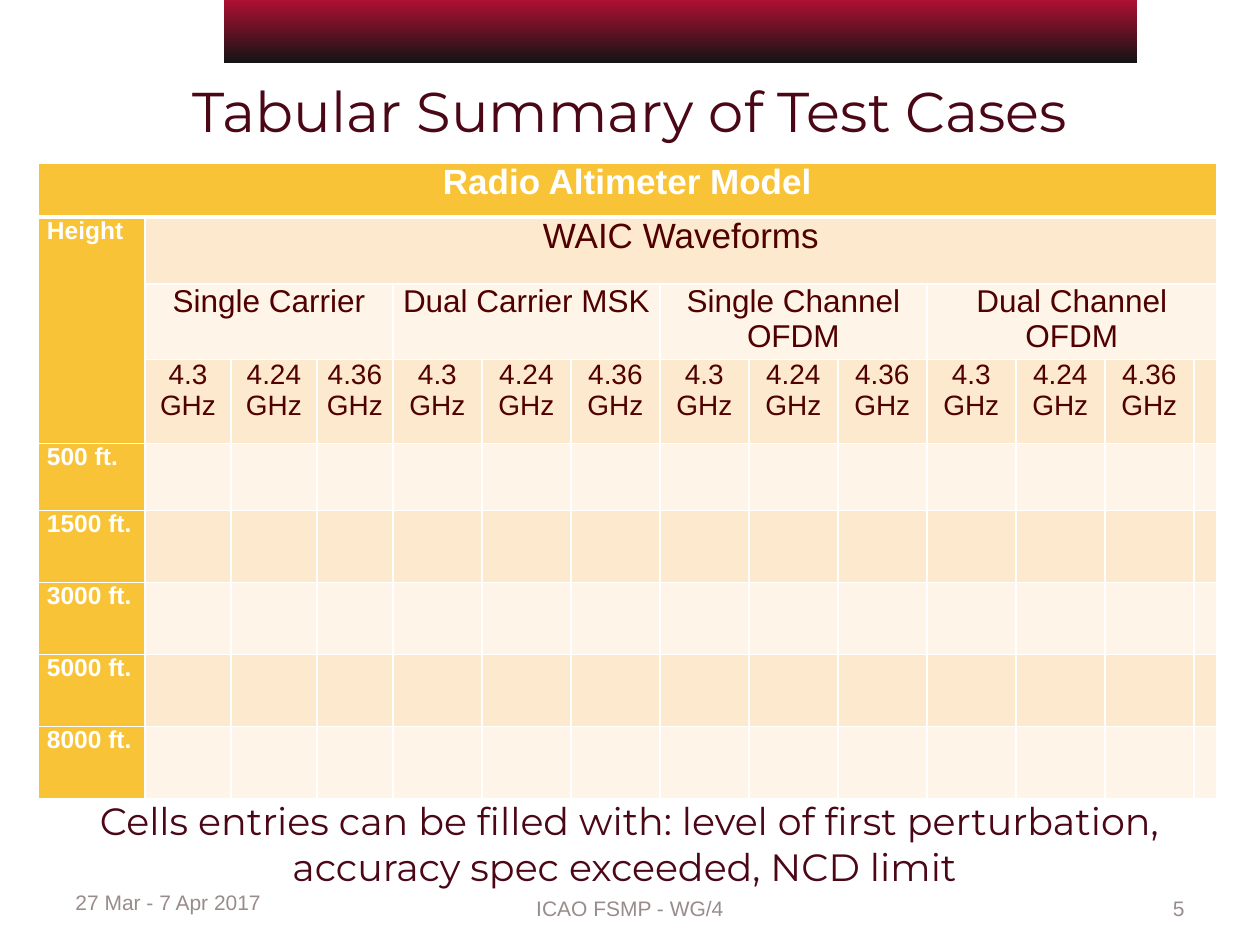
from lxml.etree import SubElement
from pptx import Presentation
from pptx.dml.color import RGBColor
from pptx.enum.shapes import MSO_SHAPE
from pptx.enum.text import MSO_ANCHOR as ANC, PP_ALIGN as AL
from pptx.oxml.ns import qn
from pptx.util import Emu, Pt

COLORS = {
    "black": "141414", "crimson": "AD1033", "title": "4B0716",
    "gold": "F8C336", "band": "FCE9CE", "pale": "FEF5E8",
    "ink": "500000", "white": "FFFFFF", "grey": "988C8C",
}
GROUPS = ["Single Carrier", "Dual Carrier MSK", "Single Channel OFDM", "Dual Channel OFDM"]
FREQUENCIES = ["4.3 GHz", "4.24 GHz", "4.36 GHz"]
HEIGHTS = ["500 ft.", "1500 ft.", "3000 ft.", "5000 ft.", "8000 ft."]
COLS = [107, 86, 86, 76] + [89] * 9 + [19]
ROWS = [54, 67, 67, 84, 67] + [72] * 4
FIRST_HEIGHT_ROW = 4


def px(n):
    """Turn pixels, 126 to the inch, into EMU."""
    return Emu(round(n * 914400 / 126))


def rgb(name):
    """Look up a named colour."""
    return RGBColor.from_string(COLORS[name])


def write(tf, text, size=12, color="grey", font="Arial", bold=False, align=AL.LEFT):
    """Put one formatted paragraph into a text frame."""
    p = tf.paragraphs[0]
    p.alignment = align
    r = p.add_run()
    r.text = text
    r.font.size, r.font.name, r.font.bold = Pt(size), font, bold
    r.font.color.rgb = rgb(color)


def place(s, x, y, w, h):
    """Set the position and size of a shape."""
    s.left, s.top, s.width, s.height = map(px, (x, y, w, h))


def add_text(slide, box, text, anchor=ANC.MIDDLE, **fmt):
    """Add a wrapped text box."""
    tf = slide.shapes.add_textbox(*map(px, box)).text_frame
    tf.word_wrap = True
    tf.vertical_anchor = anchor
    write(tf, text, **fmt)


def add_title(slide, text):
    """Move and fill the title placeholder."""
    s = slide.shapes.title
    place(s, 63, 63, 1134, 95)
    s.text_frame.vertical_anchor = ANC.MIDDLE
    write(s.text_frame, text, size=32, color="title", font="Montserrat", align=AL.CENTER)


def add_banner(slide):
    """Add the gradient bar at the top edge."""
    s = slide.shapes.add_shape(MSO_SHAPE.RECTANGLE, *map(px, (224, 0, 913, 63)))
    s.shadow.inherit = False
    s.line.fill.background()
    s.fill.gradient()
    s.fill.gradient_angle = 90
    for stop, name in zip(s.fill.gradient_stops, ("black", "crimson")):
        stop.color.rgb = rgb(name)


def add_borders(cell, **widths):
    """Draw white cell borders, one point wide unless a side is given."""
    tc_pr = cell._tc.get_or_add_tcPr()
    for side in "LRTB":
        ln = SubElement(tc_pr, qn(f"a:ln{side}"), w=str(Pt(widths.get(side, 1))))
        fill = SubElement(ln, qn("a:solidFill"))
        SubElement(fill, qn("a:srgbClr"), val=COLORS["white"])


def style_cell(cell, row, col):
    """Set the margins, borders and fill that belong to a grid position."""
    cell.margin_left = cell.margin_right = px(9)
    cell.margin_top = cell.margin_bottom = 0
    add_borders(cell, **{0: {"B": 3}, 1: {"T": 3}}.get(row, {}))
    cell.fill.solid()
    head = row == 0 or col == 0
    cell.fill.fore_color.rgb = rgb("gold" if head else "band" if row % 2 else "pale")


def add_table(slide):
    """Add the grid of test cases by height, waveform and frequency."""
    box = map(px, (38, 163, sum(COLS), sum(ROWS)))
    table = slide.shapes.add_table(len(ROWS), len(COLS), *box).table
    table.first_row = table.horz_banding = False
    for column, w in zip(table.columns, COLS):
        column.width = px(w)
    for i, (row, h) in enumerate(zip(table.rows, ROWS)):
        row.height = px(h)
        for j, cell in enumerate(row.cells):
            style_cell(cell, i, j)

    def put(row, col, text, end=None, **fmt):
        """Write a cell, merged down or across to its end cell."""
        cell = table.cell(row, col)
        if end:
            cell.merge(table.cell(*end))
        write(cell.text_frame, text, **fmt)

    center = {"color": "ink", "align": AL.CENTER}
    label = {"size": 14, "color": "white", "bold": True, "align": AL.JUSTIFY}
    last = len(COLS) - 1
    put(0, 0, "Radio Altimeter Model", (0, last), size=20, color="white", bold=True, align=AL.CENTER)
    put(1, 0, "Height", (3, 0), **label)
    put(1, 1, "WAIC Waveforms", (1, last), size=20, **center)
    for g, group in enumerate(GROUPS):
        col = 1 + g * len(FREQUENCIES)
        end = last if group == GROUPS[-1] else col + 2
        put(2, col, group, (2, end), size=18, **center)
        for f, frequency in enumerate(FREQUENCIES):
            put(3, col + f, frequency, size=16, **center)
    for i, height in enumerate(HEIGHTS, FIRST_HEIGHT_ROW):
        put(i, 0, height, **label)


def main():
    """Build and save the slide."""
    prs = Presentation()
    prs.slide_width, prs.slide_height = px(1260), px(945)
    slide = prs.slides.add_slide(prs.slide_layouts[5])
    add_banner(slide)
    add_title(slide, "Tabular Summary of Test Cases")
    add_text(slide, (903, 883, 294, 50), "5", align=AL.RIGHT)
    add_table(slide)
    add_text(slide, (55, 796, 1149, 95),
             "Cells entries can be filled with: level of first perturbation, "
             "accuracy spec exceeded, NCD limit ",
             size=21.7, color="title", font="Montserrat", align=AL.CENTER)
    add_text(slide, (63, 883, 294, 50), "27 Mar - 7 Apr 2017", anchor=ANC.TOP)
    add_text(slide, (368, 883, 524, 50), "ICAO FSMP - WG/4", align=AL.CENTER)
    prs.save("out.pptx")


if __name__ == "__main__":
    main()
